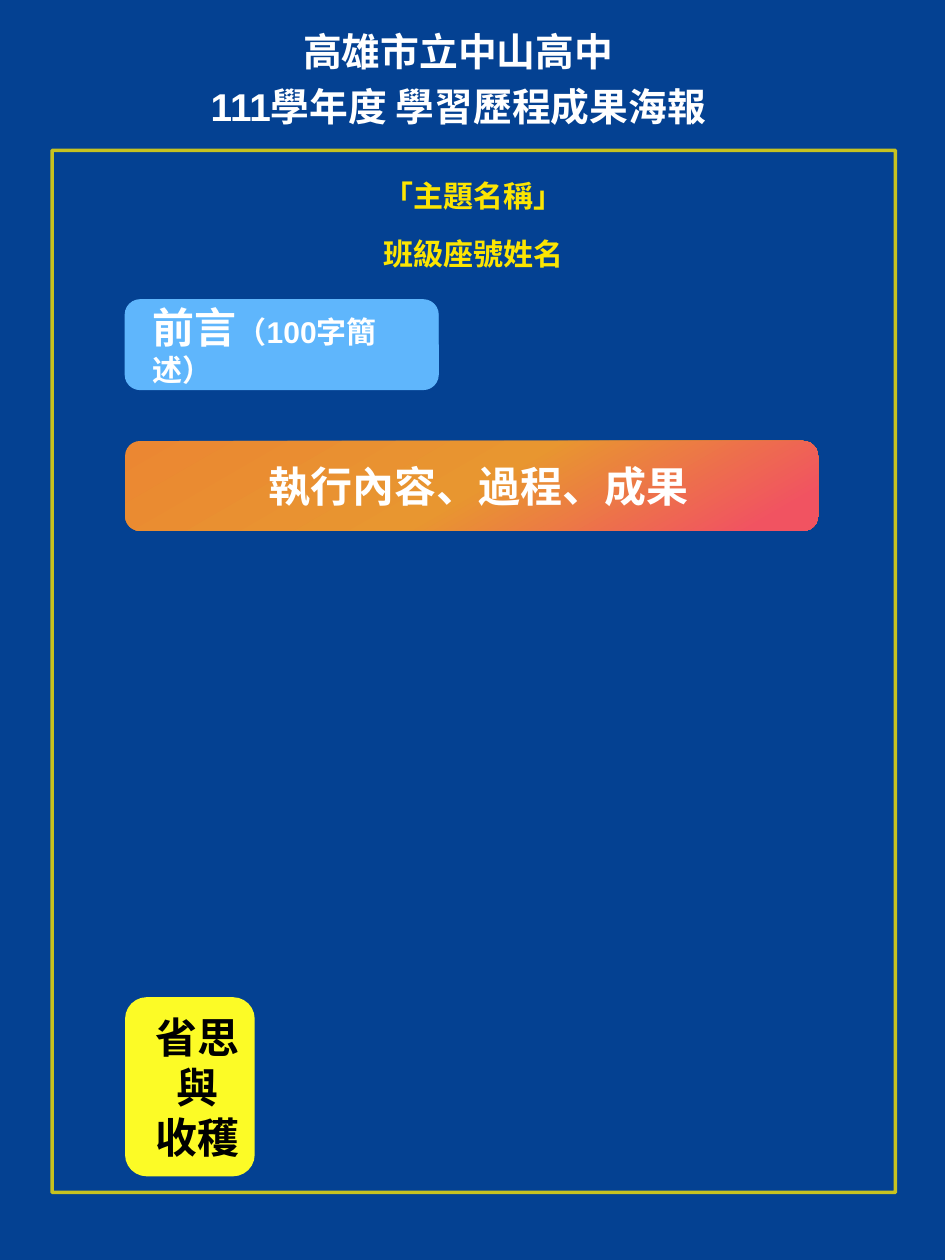
import dataclasses

import pptx
import pptx.dml.color
import pptx.enum.shapes
import pptx.enum.text
import pptx.oxml
import pptx.oxml.ns
import pptx.util
from pptx.util import Inches

SHAPES = pptx.enum.shapes.MSO_SHAPE
ALIGN = pptx.enum.text.PP_ALIGN
ANCHOR = pptx.enum.text.MSO_ANCHOR
FIT = pptx.enum.text.MSO_AUTO_SIZE


@dataclasses.dataclass(frozen=True)
class Theme:
    background: str = "044192"
    gold: str = "FCE502"
    white: str = "FFFFFF"
    black: str = "000000"
    sky: str = "5FB6FC"
    lemon: str = "FCFB26"
    banner: tuple = ((0, "EB8732"), (51, "E89630"), (92, "F15361"))
    banner_angle: int = 60
    frame_opacity: int = 79
    latin: str = "Arial"
    quote: str = "Lato"
    chinese: str = "Noto Sans CJK TC"
    title_size: float = 31
    body_size: float = 24
    heading_size: float = 33.6


THEME = Theme()


def color(value):
    return pptx.dml.color.RGBColor.from_string(value)


def apply(target, formats):
    for name, value in formats.items():
        setattr(target, name, value)


def add_run(paragraph, text, size, text_color, font=THEME.latin):
    run = paragraph.add_run()
    run.text = text
    apply(run.font, {"name": font, "size": pptx.util.Pt(size), "bold": True})
    run.font.color.rgb = color(text_color)
    east_asian = pptx.oxml.parse_xml(
        f'<a:ea {pptx.oxml.ns.nsdecls("a")} typeface="{THEME.chinese}"/>')
    run.font._element.find(pptx.oxml.ns.qn("a:latin")).addnext(east_asian)


def fill_gradient(shape, stops, angle):
    shape.fill.background()
    marks = "".join(
        f'<a:gs pos="{position * 1000}"><a:srgbClr val="{value}"/></a:gs>'
        for position, value in stops)
    gradient = pptx.oxml.parse_xml(
        f'<a:gradFill {pptx.oxml.ns.nsdecls("a")} rotWithShape="1">'
        f'<a:gsLst>{marks}</a:gsLst>'
        f'<a:lin ang="{angle * 60000}" scaled="0"/></a:gradFill>')
    properties = shape._element.spPr
    properties.replace(properties.find(pptx.oxml.ns.qn("a:noFill")), gradient)


def add_frame(slide, box):
    frame = slide.shapes.add_shape(SHAPES.RECTANGLE, *map(Inches, box))
    frame.shadow.inherit = False
    frame.fill.background()
    frame.line.color.rgb = color(THEME.gold)
    frame.line.width = pptx.util.Pt(2.75)
    line_color = frame.line._ln.find(".//" + pptx.oxml.ns.qn("a:srgbClr"))
    line_color.append(pptx.oxml.parse_xml(
        f'<a:alpha {pptx.oxml.ns.nsdecls("a")} val="{THEME.frame_opacity * 1000}"/>'))


def add_title(slide, box):
    title = slide.shapes.title
    apply(title, dict(zip(("left", "top", "width", "height"), map(Inches, box))))
    apply(title.text_frame, {"word_wrap": True, "auto_size": FIT.SHAPE_TO_FIT_TEXT,
                             "vertical_anchor": ANCHOR.TOP})
    paragraph = title.text_frame.paragraphs[0]
    apply(paragraph, {"alignment": ALIGN.CENTER, "line_spacing": 1.2,
                      "space_before": pptx.util.Pt(0)})
    add_run(paragraph, "高雄市立中山高中", THEME.title_size, THEME.white)
    paragraph.add_line_break()
    add_run(paragraph, "111學年度 學習歷程成果海報", THEME.title_size, THEME.white)


def add_topic(slide, box):
    text_frame = slide.shapes.add_textbox(*map(Inches, box)).text_frame
    apply(text_frame, {"word_wrap": True, "auto_size": FIT.SHAPE_TO_FIT_TEXT})
    topic, author = text_frame.paragraphs[0], text_frame.add_paragraph()
    for paragraph in (topic, author):
        apply(paragraph, {"alignment": ALIGN.CENTER, "line_spacing": 1.62})
    for text, font in (("「", THEME.quote), ("主題名稱", THEME.latin), ("」", THEME.chinese)):
        add_run(topic, text, THEME.body_size, THEME.gold, font)
    add_run(author, "班級座號姓名", THEME.body_size, THEME.gold)


def add_heading(slide, box, lines, text_color, alignment=ALIGN.CENTER):
    heading = slide.shapes.add_shape(SHAPES.ROUNDED_RECTANGLE, *map(Inches, box))
    heading.shadow.inherit = False
    heading.line.fill.background()
    text_frame = heading.text_frame
    apply(text_frame, {"word_wrap": True, "vertical_anchor": ANCHOR.MIDDLE})
    for index, runs in enumerate(lines):
        paragraph = text_frame.add_paragraph() if index else text_frame.paragraphs[0]
        paragraph.alignment = alignment
        paragraph._p.get_or_add_pPr().set("marL", str(Inches(0.16)))
        for text, size in runs:
            add_run(paragraph, text, size, text_color)
    return heading


def add_sections(slide, box):
    left, top, width, height = box
    large = THEME.heading_size

    foreword = add_heading(
        slide, (left, top, 3.48, 1),
        [[("前言", large), ("（100字簡述）", THEME.body_size)]], THEME.white, ALIGN.LEFT)
    foreword.fill.solid()
    foreword.fill.fore_color.rgb = color(THEME.sky)
    foreword.line.color.rgb = color(THEME.sky)
    foreword.line.width = pptx.util.Pt(0.75)

    content = add_heading(slide, (left, top + 1.57, width, 1),
                          [[("執行內容、過程、成果", large)]], THEME.white)
    fill_gradient(content, THEME.banner, THEME.banner_angle)

    reflection = add_heading(slide, (left, top + height - 1.99, 1.44, 1.99),
                             [[("省思與", large)], [("收穫", large)]], THEME.black)
    reflection.fill.solid()
    reflection.fill.fore_color.rgb = color(THEME.lemon)


def main():
    presentation = pptx.Presentation()
    apply(presentation, {"slide_width": Inches(10.5), "slide_height": Inches(14)})
    slide = presentation.slides.add_slide(presentation.slide_layouts.get_by_name("Title Only"))
    slide.background.fill.solid()
    slide.background.fill.fore_color.rgb = color(THEME.background)
    add_frame(slide, (0.58, 1.67, 9.37, 11.58))
    add_title(slide, (0.9, 0.15, 8.38, 1.35))
    add_topic(slide, (2.84, 1.67, 4.85, 1.41))
    add_sections(slide, (1.39, 3.33, 7.7, 9.74))
    presentation.save("out.pptx")


if __name__ == "__main__":
    main()
